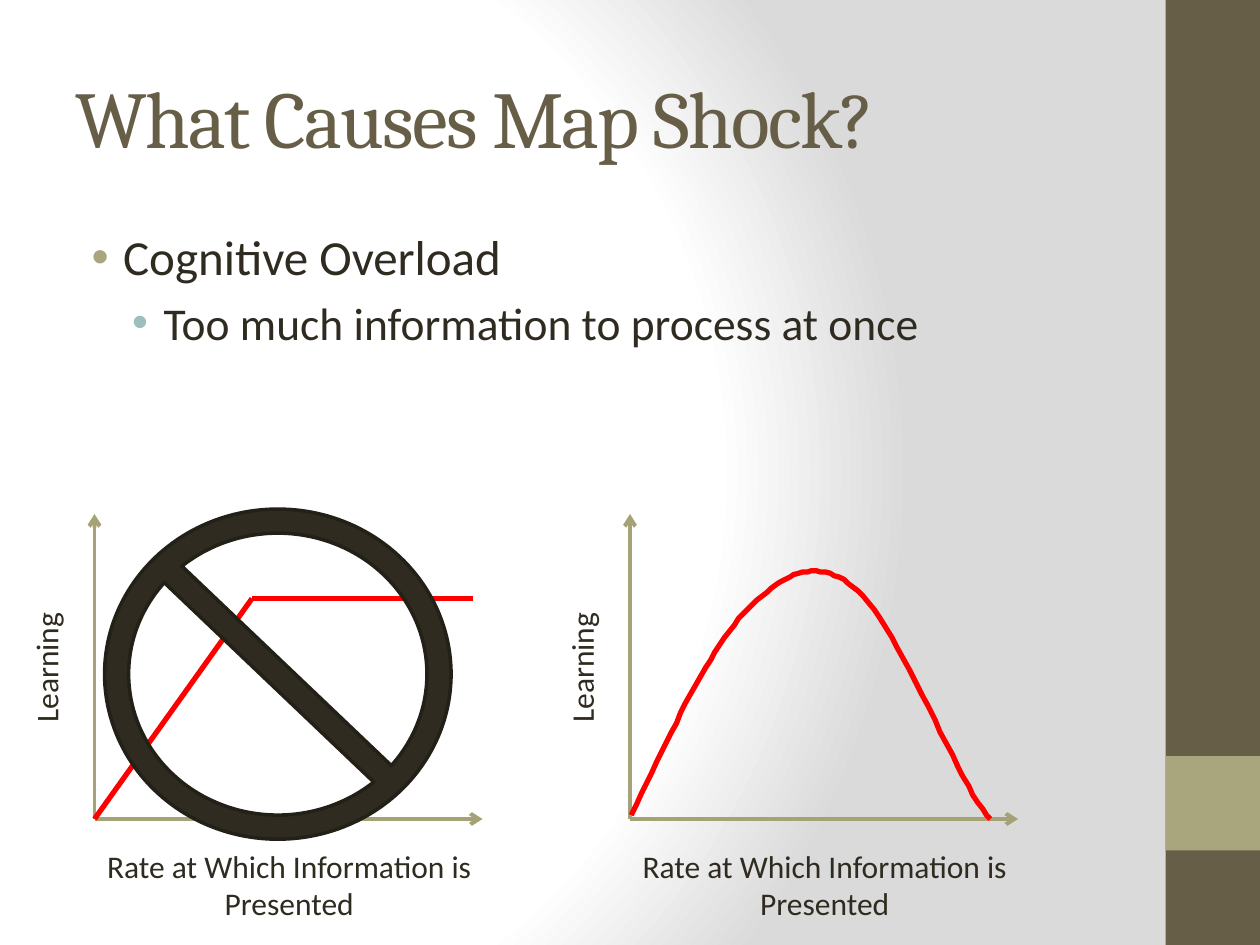
import pptx
import pptx.dml.color
import pptx.enum.shapes
import pptx.enum.text
import pptx.oxml
import pptx.oxml.ns
import pptx.util
from lxml import etree

PX = 9144  # 100 px to the inch
NS = pptx.oxml.ns.nsdecls("a")
QN = pptx.oxml.ns.qn
SHAPE = pptx.enum.shapes.MSO_SHAPE
ALIGN = pptx.enum.text.PP_ALIGN
ANCHOR = pptx.enum.text.MSO_ANCHOR
FIT = pptx.enum.text.MSO_AUTO_SIZE

BROWN, TAN, INK = "675E47", "A9A57C", "2F2B20"
AXIS, RED, TEAL, EDGE = "A6A278", "FF0000", "9CBEBD", "232018"


def px(*vals):
    return [pptx.util.Emu(round(v * PX)) for v in vals]


def color(code):
    return pptx.dml.color.RGBColor.from_string(code)


def pen(shape, code, width):
    shape.line.color.rgb = color(code)
    shape.line.width = pptx.util.Pt(width)


def style(par, size, code=INK, face="Calibri", align=ALIGN.LEFT):
    par.alignment = align
    par.font.size = pptx.util.Pt(size)
    par.font.name = face
    par.font.color.rgb = color(code)


def block(slide, kind, box, fill):
    shape = slide.shapes.add_shape(kind, *px(*box))
    shape.shadow.inherit = False
    shape.fill.solid()
    shape.fill.fore_color.rgb = color(fill)
    shape.line.fill.background()
    return shape


def label(slide, box, text, wrap=True):
    shape = slide.shapes.add_textbox(*px(*box))
    shape.text_frame.word_wrap = wrap
    par = shape.text_frame.paragraphs[0]
    par.text = text
    style(par, 18, align=ALIGN.CENTER if wrap else ALIGN.LEFT)
    return shape


def link(slide, start, end, code, width, arrow=False):
    line = slide.shapes.add_connector(
        pptx.enum.shapes.MSO_CONNECTOR.STRAIGHT, *px(*start, *end))
    pen(line, code, width)
    if arrow:
        etree.SubElement(line.line._get_or_add_ln(), QN("a:tailEnd"), type="arrow")
    etree.SubElement(line._element.spPr, QN("a:effectLst"))


def backdrop(slide):
    slide.background.fill.solid()
    stops = "".join(
        f'<a:gs pos="{pos}000"><a:srgbClr val="{code}"/></a:gs>'
        for pos, code in ((0, "FFFFFF"), (75, "FFFFFF"), (100, "DADADA")))
    grad = pptx.oxml.parse_xml(
        f'<a:gradFill {NS} rotWithShape="1"><a:gsLst>{stops}</a:gsLst>'
        '<a:path path="circle"><a:fillToRect l="20000" t="50000" r="100000" b="50000"/>'
        '</a:path></a:gradFill>')
    solid = slide.background._cSld.find(".//" + QN("a:solidFill"))
    solid.getparent().replace(solid, grad)


def sidebar(slide, left, top, width, height):
    block(slide, SHAPE.RECTANGLE, (left, top, width, height), BROWN)
    block(slide, SHAPE.RECTANGLE, (left, top + height - 2 * width, width, width), TAN)


def heading(slide, box, text):
    title = slide.shapes.title
    title.left, title.top, title.width, title.height = px(*box)
    frame = title.text_frame
    frame.text = text
    frame.auto_size = FIT.NONE
    frame.vertical_anchor = ANCHOR.MIDDLE
    par = frame.paragraphs[0]
    style(par, 46, BROWN, "Cambria")
    par.runs[0]._r.get_or_add_rPr().set("spc", "-100")


def bullets(slide, box, items):
    frame = slide.shapes.add_textbox(*px(*box)).text_frame
    frame.word_wrap = True
    for level, (text, size, indent, dot) in enumerate(items):
        par = frame.add_paragraph() if level else frame.paragraphs[0]
        par.text = text
        par.level = level
        par.space_before = pptx.util.Pt(size * 0.2)
        props = par._p.get_or_add_pPr()
        margin, hang = px(indent, -25)
        props.set("marL", str(margin))
        props.set("indent", str(hang))
        for part in (f'<a:buClr {NS}><a:srgbClr val="{dot}"/></a:buClr>',
                     f'<a:buFont {NS} typeface="Arial"/>',
                     f'<a:buChar {NS} char="•"/>'):
            props.append(pptx.oxml.parse_xml(part))
        style(par, size)


def axes(slide, x, y):
    """Draw labelled axes from the origin x, y."""
    link(slide, (x, y), (x, y - 242), AXIS, 2.25, True)
    link(slide, (x, y), (x + 308, y), AXIS, 2.25, True)
    name = label(slide, (x - 93, y - 141, 109, 40), "Learning", False)
    name.rotation = 270
    label(slide, (x, y + 17, 309, 71), "Rate at Which Information is Presented")


def plateau(slide, x, y):
    axes(slide, x, y)
    knee = (x + 125, y - 175)
    link(slide, (x, y), knee, RED, 3)
    link(slide, knee, (x + 300, y - 175), RED, 3)


def bezier(points, steps=24):
    """Yield points along joined cubic curves."""
    for i in range(0, len(points) - 1, 3):
        a, b, c, d = points[i:i + 4]
        for t in (k / steps for k in range(1, steps + 1)):
            u = 1 - t
            yield tuple(u**3 * a[n] + 3 * u * u * t * b[n] + 3 * u * t * t * c[n]
                        + t**3 * d[n] for n in (0, 1))


def hump(slide, x, y):
    axes(slide, x, y)
    knots = [(x + dx, y - dy) for dx, dy in (
        (1, 3), (33, 70), (64, 137), (94, 167), (124, 197),
        (150, 209), (181, 181), (213, 154), (263, 22), (286, 0))]
    build = slide.shapes.build_freeform(*knots[0], scale=PX)
    build.add_line_segments(bezier(knots), close=False)
    curve = build.convert_to_shape()
    curve.shadow.inherit = False
    curve.fill.background()
    pen(curve, RED, 3)


def ban(slide, box):
    sign = block(slide, SHAPE.NO_SYMBOL, box, INK)
    sign.adjustments[0] = 0.073
    pen(sign, EDGE, 2)


def main():
    deck = pptx.Presentation()
    deck.slide_width, deck.slide_height = px(1000, 750)
    slide = deck.slides.add_slide(deck.slide_layouts[5])
    backdrop(slide)
    sidebar(slide, 925, 0, 75, 750)
    heading(slide, (50, 30, 833, 125), "What Causes Map Shock?")
    bullets(slide, (50, 175, 833, 142), (
        ("Cognitive Overload", 28, 38, TAN),
        ("Too much information to process at once", 26, 70, TEAL)))
    plateau(slide, 75, 650)
    hump(slide, 500, 650)
    ban(slide, (83, 404, 275, 262))
    deck.save("out.pptx")


if __name__ == "__main__":
    main()
